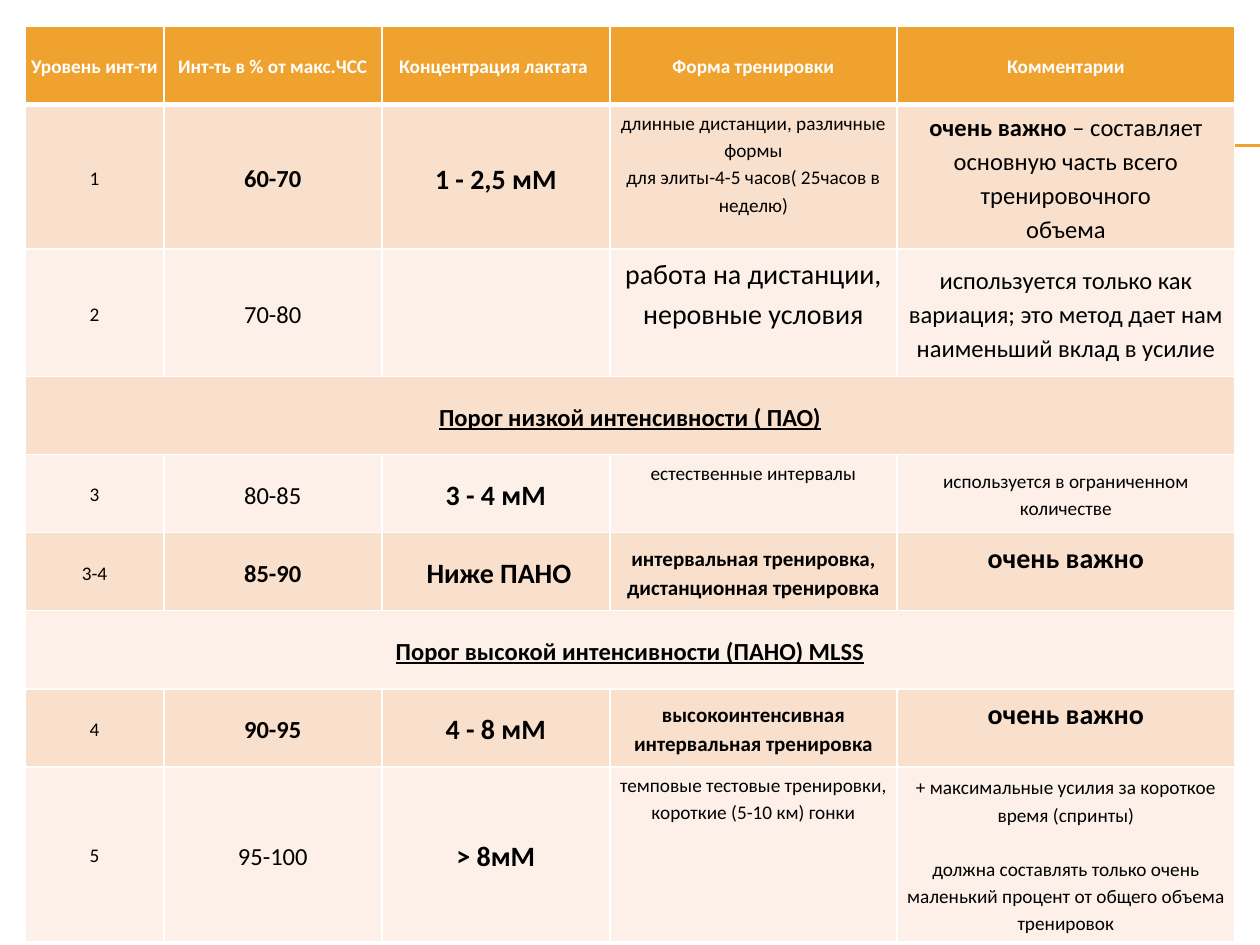
from dataclasses import dataclass

from lxml import etree
from pptx import Presentation
from pptx.dml.color import RGBColor
from pptx.enum.shapes import MSO_CONNECTOR
from pptx.enum.text import MSO_ANCHOR, PP_ALIGN
from pptx.oxml.ns import qn
from pptx.util import Inches, Pt

COLORS = {
    "accent": "F0A22E",
    "dark_band": "F9E0CD",
    "light_band": "FCF0E8",
    "white": "FFFFFF",
    "text": "000000",
}


@dataclass
class Entry:
    """Content of one table cell; each newline starts a paragraph."""
    text: str
    size: int = 11
    bold: bool = False
    top: bool = False
    underline: bool = False
    lead: str = ""  # bold opening words
    gap: float = 0  # points before each further paragraph


class SlideBuilder:
    font = "Calibri"
    line_spacing = 1.15
    inset = Inches(0.03)

    def __init__(self, slide):
        self.slide = slide

    def rule(self, x1, x2, y):
        line = self.slide.shapes.add_connector(
            MSO_CONNECTOR.STRAIGHT, Inches(x1), Inches(y), Inches(x2), Inches(y))
        line.line.color.rgb = RGBColor.from_string(COLORS["accent"])
        line.line.width = Pt(0.75)
        etree.SubElement(line._element.spPr, qn("a:effectLst"))

    def borders(self, cell, **widths):
        properties = cell._tc.get_or_add_tcPr()
        for side in "LRTB":
            edge = etree.SubElement(properties, qn(f"a:ln{side}"), w=str(Pt(widths.get(side, 1))))
            fill = etree.SubElement(edge, qn("a:solidFill"))
            etree.SubElement(fill, qn("a:srgbClr"), val=COLORS["white"])

    def fill_cell(self, cell, entry, color):
        cell.vertical_anchor = MSO_ANCHOR.TOP if entry.top else MSO_ANCHOR.MIDDLE
        cell.margin_left = cell.margin_right = self.inset
        cell.margin_top = cell.margin_bottom = self.inset
        cell.text_frame.text = entry.text
        for index, paragraph in enumerate(cell.text_frame.paragraphs):
            paragraph.alignment = PP_ALIGN.CENTER
            paragraph.line_spacing = self.line_spacing
            if index and entry.gap:
                paragraph.space_before = Pt(entry.gap)
            if index == 0 and entry.lead:
                rest = paragraph.text.removeprefix(entry.lead)
                paragraph.text = entry.lead
                paragraph.add_run().text = rest
            for run in paragraph.runs:
                run.font.name = self.font
                run.font.size = Pt(entry.size)
                run.font.bold = entry.bold or run.text == entry.lead
                run.font.underline = entry.underline
                run.font.color.rgb = RGBColor.from_string(COLORS[color])

    def table(self, left, top, widths, heights, rows):
        table = self.slide.shapes.add_table(
            len(heights), len(widths), Inches(left), Inches(top),
            Inches(sum(widths)), Inches(sum(heights))).table
        for column, width in zip(table.columns, widths):
            column.width = Inches(width)
        for row, height in zip(table.rows, heights):
            row.height = Inches(height)
        for r, entries in enumerate(rows):
            band = "accent" if r == 0 else "dark_band" if r % 2 else "light_band"
            for c in range(len(widths)):
                cell = table.cell(r, c)
                self.borders(cell, T=3 if r == 1 else 1, B=3 if r == 0 else 1)
                cell.fill.solid()
                cell.fill.fore_color.rgb = RGBColor.from_string(COLORS[band])
            # A single entry is a threshold that spans the table
            if len(entries) == 1:
                table.cell(r, 0).merge(table.cell(r, len(widths) - 1))
            for c, entry in enumerate(entries):
                if entry:
                    self.fill_cell(table.cell(r, c), entry, "white" if r == 0 else "text")


HEADINGS = ["Уровень инт-ти", "Инт-ть в % от макс.ЧСС", "Концентрация лактата ",
            "Форма тренировки", "Комментарии"]
VERY_IMPORTANT = Entry("очень важно", 16, bold=True, top=True)

INTENSITY_ROWS = [
    [Entry(heading, bold=True) for heading in HEADINGS],
    [Entry("1"), Entry("60-70", 14, bold=True), Entry("1 - 2,5 мМ", 16, bold=True),
     Entry("длинные дистанции, различные формы\n"
           "для элиты-4-5 часов( 25часов в неделю)", top=True),
     Entry("очень важно – составляет основную часть всего тренировочного\nобъема",
           14, lead="очень важно")],
    [Entry("2"), Entry("70-80", 14), None,
     Entry("работа на дистанции, неровные условия", 16, top=True),
     Entry("используется только как вариация; это метод дает нам\n"
           "наименьший вклад в усилие", 14)],
    [Entry("Порог низкой интенсивности ( ПАО)", 14, bold=True, underline=True)],
    [Entry("3"), Entry("80-85", 14), Entry("3 - 4 мМ", 16, bold=True),
     Entry("естественные интервалы", top=True),
     Entry("используется в ограниченном количестве")],
    [Entry("3-4"), Entry("85-90", 14, bold=True), Entry(" Ниже ПАНО", 16, bold=True),
     Entry("интервальная тренировка, дистанционная тренировка", 12, bold=True),
     VERY_IMPORTANT],
    [Entry("Порог высокой интенсивности (ПАНО) MLSS", 14, bold=True, underline=True)],
    [Entry("4"), Entry("90-95", 14, bold=True), Entry("4 - 8 мМ", 16, bold=True),
     Entry("высокоинтенсивная интервальная тренировка", 12, bold=True),
     VERY_IMPORTANT],
    [Entry("5"), Entry("95-100", 14), Entry("> 8мМ", 16, bold=True),
     Entry("темповые тестовые тренировки, короткие (5-10 км) гонки", top=True),
     Entry("+ максимальные усилия за короткое время (спринты)\n"
           "должна составлять только очень маленький процент от общего объема тренировок",
           gap=15.4)],
]


def main():
    presentation = Presentation()
    presentation.slide_width, presentation.slide_height = Inches(10), Inches(7.5)
    builder = SlideBuilder(presentation.slides.add_slide(presentation.slide_layouts[6]))

    # Double rule behind the table
    for y in (1.15, 1.16):
        builder.rule(0.56, 10, y)

    # Intensity levels
    builder.table(0.2, 0.21, [1.1, 1.73, 1.81, 2.28, 2.68],
                  [0.62, 1.14, 1.01] + [0.62] * 5 + [1.39], INTENSITY_ROWS)

    presentation.save("out.pptx")


if __name__ == "__main__":
    main()
